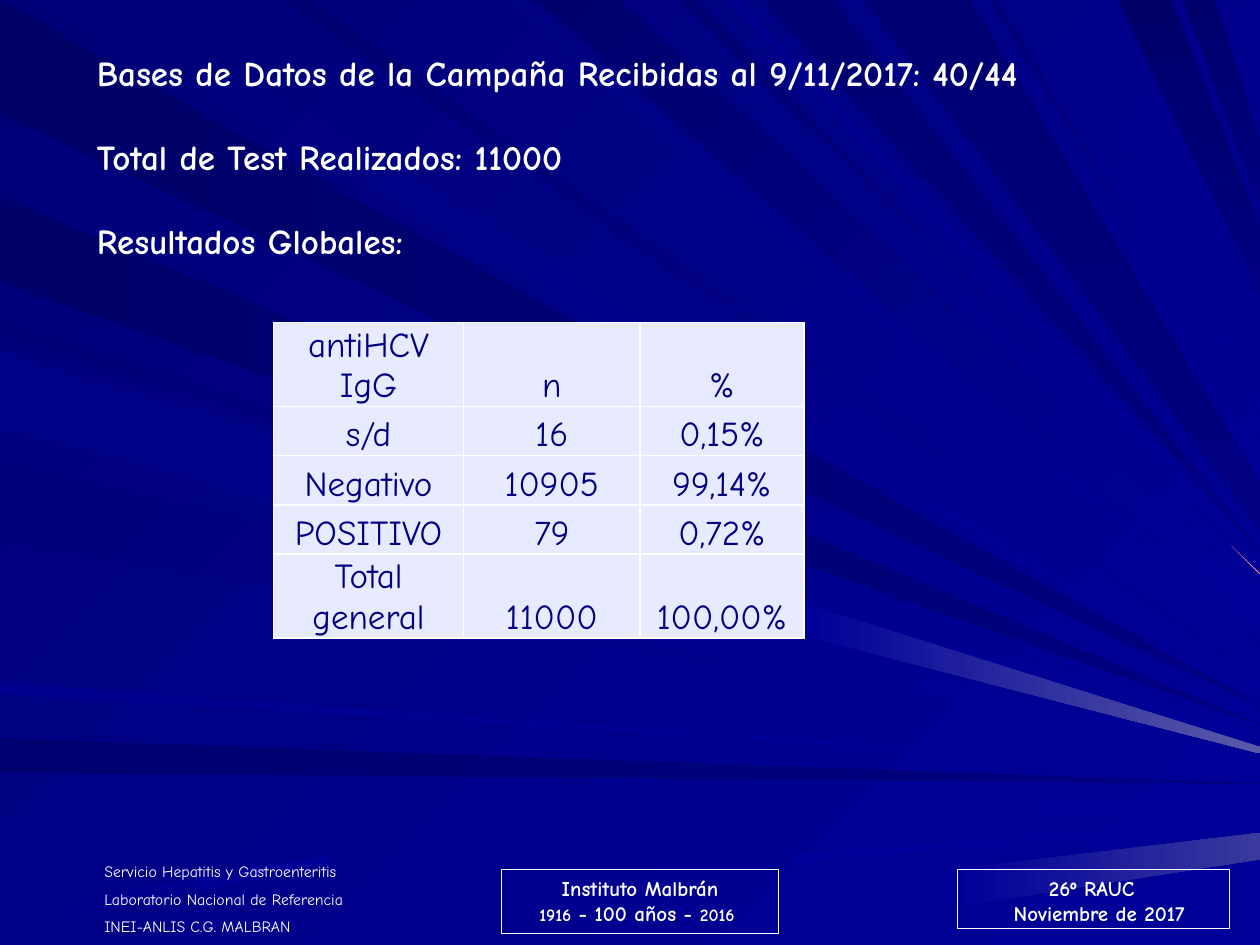
from lxml import etree
from pptx import Presentation
from pptx.dml.color import RGBColor
from pptx.enum.shapes import MSO_SHAPE
from pptx.enum.text import MSO_ANCHOR, PP_ALIGN
from pptx.oxml.ns import qn
from pptx.util import Inches, Pt

RECTANGLE = MSO_SHAPE.RECTANGLE
TOP, BOTTOM = MSO_ANCHOR.TOP, MSO_ANCHOR.BOTTOM
LEFT, CENTER = PP_ALIGN.LEFT, PP_ALIGN.CENTER
FONT = "Comic Neue"
BLANK_LAYOUT = 6
WIDTH, HEIGHT = 10, 7.5

COLORS = {
    "white": "FFFFFF", "cell": "E8EAFF", "ink": "000080", "pink": "FF9999",
    "haze": "5A5AA6", "mist": "39399E",
    # Blue tones of the backdrop, from dark to light
    "b69": "000069", "b6B": "00006B", "b6D": "00006D", "b70": "000070",
    "b71": "000071", "b73": "000073", "b76": "000076", "b78": "000078",
    "b7B": "00007B", "b7E": "00007E", "b80": "000080", "b83": "000083",
    "b85": "000085", "b8A": "00008A", "b8E": "00008E", "b99": "000099",
}

# Rays cross the slide from an edge to its right side. Each has a start colour,
# the two ends of its base, and one or two heights where it meets the right side.
LEFT_DARK = [("b69", 0, 0.9, 5.6), ("b6B", 1.56, 2.24, 5.75), ("b71", 5.86, 6.13, 6.22)]
LEFT_SLANTED = [("b76", 2.54, 2.66, 5.79), ("b7E", 2.73, 3.37, 5.9), ("b7B", 3.67, 4.3, 5.95)]
LEFT_LEVEL = [("b8E", 5.42, 5.51, 6.12), ("b85", 2.79, 3.41, 5.95)]
TOP_BRIGHT = [
    ("b7B", 0.26, 1, 5.54), ("b70", 2.25, 2.47, 5.4), ("b83", 4, 4.16, 5.1),
    ("b6D", 4.26, 4.92, 4.7, 5), ("b73", 5.4, 5.52, 4.55), ("b8E", 5.77, 5.88, 4.45),
    ("b78", 7.85, 7.92, 3.5), ("b85", 8.15, 8.24, 3.3), ("b8A", 8.65, 8.72, 2.5),
]
TOP_DARK = [
    ("b73", 6.06, 6.61, 4.38), ("b73", 6.86, 7.7, 3.84, 4.2),
    ("b6B", 8.87, 9.3, 1.8, 2.33), ("b6D", 9.39, 9.64, 1.12, 1.65),
]
# Side of the base, end colour, clockwise angle, rays
FANS = [
    ("left", "b80", 0, LEFT_DARK),
    ("top", "b99", 45, TOP_BRIGHT),
    ("top", "b80", 90, TOP_DARK),
    ("left", "b99", 45, LEFT_SLANTED),
    ("left", "b99", 0, LEFT_LEVEL),
]
# Short bands: colours, left and right, heights at the left, heights at the right
BANDS = [
    ("b99", "haze", (6.35, 10), (4.78, 5.04), (5.93, 5.98)),
    ("b99", "b99", (8.31, 10), (6.36, 6.5), (6.32, 6.41)),
    ("b99", "b99", (6.28, 10), (6.78, 6.85), (6.51,)),
    ("b85", "b99", (0, 2.64), (7.23, 7.4), (6.78, 6.85)),
    ("b99", "mist", (7.56, 10), (6.9, 7.2), (6.61, 6.82)),
    ("pink", "pink", (9.77, 10), (4.33,), (4.55, 4.56)),
]

HEADLINES = [
    "Bases de Datos de la Campaña Recibidas al 9/11/2017: 40/44",
    "Total de Test Realizados: 11000",
    "Resultados Globales:",
]
RESULTS = [
    ("antiHCV IgG", "n", "%"),
    ("s/d", "16", "0,15%"),
    ("Negativo", "10905", "99,14%"),
    ("POSITIVO", "79", "0,72%"),
    ("Total general", "11000", "100,00%"),
]
COLUMN_WIDTHS = (1.51, 1.4, 1.3)
SERVICE = [
    "Servicio Hepatitis y Gastroenteritis",
    "Laboratorio Nacional de Referencia",
    "INEI-ANLIS C.G. MALBRAN",
]
MEETING = ["26º RAUC ", " Noviembre de 2017"]


def color(name):
    return RGBColor.from_string(COLORS[name])


def paint(fill, start, end, angle):
    """Fill with one colour, or with a gradient at a clockwise angle."""
    if start == end:
        fill.solid()
        fill.fore_color.rgb = color(start)
        return
    fill.gradient()
    fill.gradient_angle = -angle % 360
    for stop, name in zip(fill.gradient_stops, (start, end)):
        stop.color.rgb = color(name)


def style(paragraph, size, bold=False, align=LEFT, name="white"):
    paragraph.alignment = align
    font = paragraph.font
    font.name, font.size, font.bold = FONT, Pt(size), bold
    font.color.rgb = color(name)


def add_lines(slide, box, lines, size, bold=False, align=LEFT, gap=0):
    frame = slide.shapes.add_textbox(*map(Inches, box)).text_frame
    frame.word_wrap = True
    for index, line in enumerate(lines):
        paragraph = frame.paragraphs[0] if index == 0 else frame.add_paragraph()
        paragraph.text = line
        style(paragraph, size, bold, align)
        if index:
            paragraph.space_before = Pt(gap)


def add_frame(slide, box, line_width):
    shape = slide.shapes.add_shape(RECTANGLE, *map(Inches, box))
    shape.shadow.inherit = False
    shape.fill.background()
    shape.line.color.rgb = color("white")
    shape.line.width = Pt(line_width)
    return shape


def add_ray(group, corners, start, end, angle):
    points = [(Inches(x), Inches(y)) for x, y in corners]
    builder = group.shapes.build_freeform(*points[0])
    builder.add_line_segments(points[1:], close=True)
    ray = builder.convert_to_shape()
    ray.shadow.inherit = False
    ray.line.fill.background()
    paint(ray.fill, start, end, angle)


def add_backdrop(slide):
    paint(slide.background.fill, "b78", "b99", 45)
    group = slide.shapes.add_group_shape()
    for side, end, angle, rays in FANS:
        for start, first, last, *tips in rays:
            if side == "top":
                base = [(first, 0), (last, 0)]
            else:
                base = [(0, last), (0, first)]
            add_ray(group, base + [(WIDTH, tip) for tip in tips], start, end, angle)
    for start, end, (left, right), near, far in BANDS:
        corners = [(left, y) for y in reversed(near)] + [(right, y) for y in far]
        add_ray(group, corners, start, end, 0)


def add_borders(cell):
    properties = cell._tc.get_or_add_tcPr()
    for index, side in enumerate(("a:lnL", "a:lnR", "a:lnT", "a:lnB")):
        line = etree.Element(qn(side), w=str(Pt(1)))
        fill = etree.SubElement(line, qn("a:solidFill"))
        etree.SubElement(fill, qn("a:srgbClr"), val=COLORS["white"])
        properties.insert(index, line)


def add_results(slide, left, top, row_height):
    table = slide.shapes.add_table(
        len(RESULTS), len(COLUMN_WIDTHS), Inches(left), Inches(top),
        Inches(sum(COLUMN_WIDTHS)), Inches(row_height * len(RESULTS))).table
    table.first_row = table.horz_banding = False
    for column, width in zip(table.columns, COLUMN_WIDTHS):
        column.width = Inches(width)
    for row, values in zip(table.rows, RESULTS):
        for cell, value in zip(row.cells, values):
            cell.text = value
            cell.margin_left = cell.margin_right = 0
            cell.margin_top = cell.margin_bottom = 0
            cell.vertical_anchor = BOTTOM
            paint(cell.fill, "cell", "cell", 0)
            style(cell.text_frame.paragraphs[0], 20, align=CENTER, name="ink")
            add_borders(cell)


def add_institute(slide, box):
    frame = add_frame(slide, box, 1).text_frame
    frame.word_wrap = True
    frame.vertical_anchor = TOP
    name, years = frame.paragraphs[0], frame.add_paragraph()
    name.text = "Instituto Malbrán"
    for paragraph in (name, years):
        style(paragraph, 12, True, CENTER)
    for text, size in (("1916", 10), (" - 100 años - ", 12), ("2016 ", 10)):
        run = years.add_run()
        run.text = text
        run.font.size = Pt(size)


def add_footer(slide, top):
    add_lines(slide, (0.73, top - 0.11, 2.53, 0.71), SERVICE, 9, gap=4.9)
    add_lines(slide, (7.63, top, 2.13, 0.5), MEETING, 12, True, CENTER)
    add_frame(slide, (7.6, top, 2.16, 0.47), 0.75)
    add_institute(slide, (3.98, top, 2.2, 0.51))


def main():
    presentation = Presentation()
    presentation.slide_width, presentation.slide_height = Inches(WIDTH), Inches(HEIGHT)
    slide = presentation.slides.add_slide(presentation.slide_layouts[BLANK_LAYOUT])
    add_backdrop(slide)
    add_footer(slide, 6.9)
    # Headlines and results
    add_lines(slide, (0.67, 0.36, 8.5, 2.42), HEADLINES, 20, True, gap=24)
    add_results(slide, 2.17, 2.56, 0.39)
    presentation.save("out.pptx")


if __name__ == "__main__":
    main()
